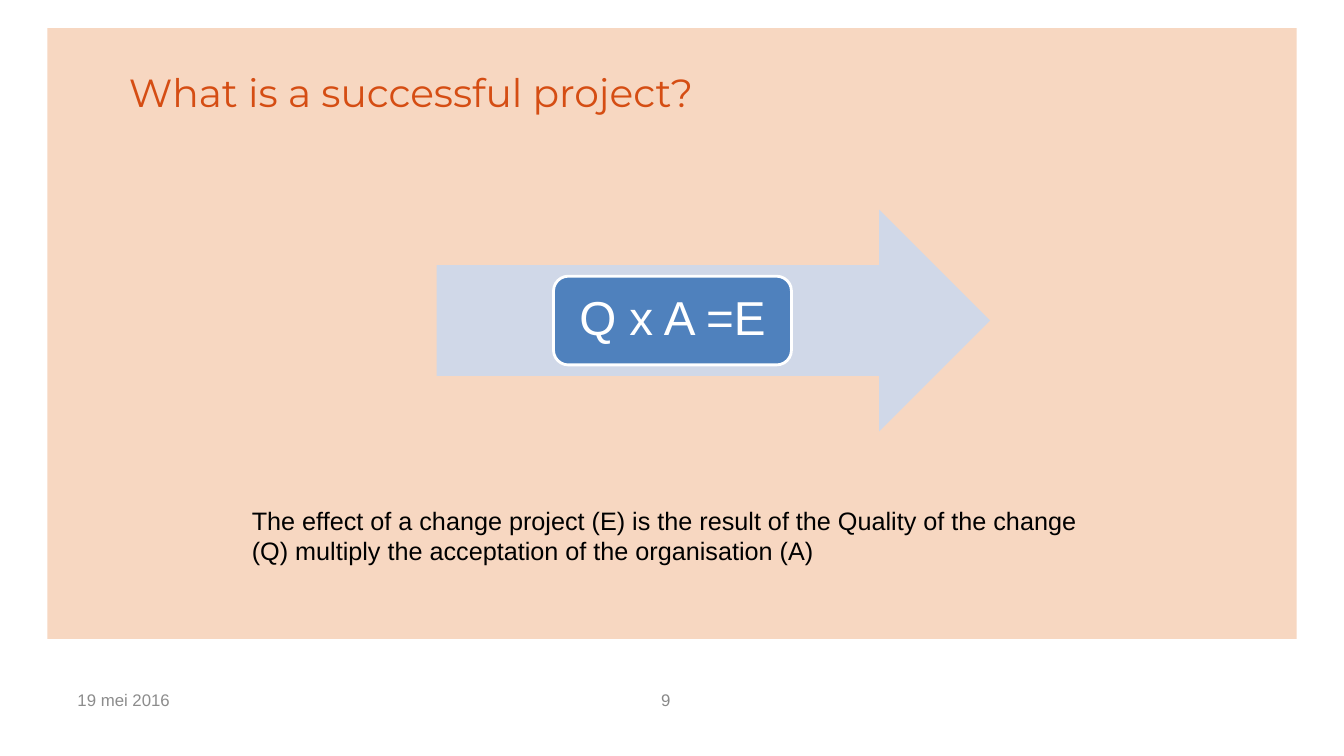
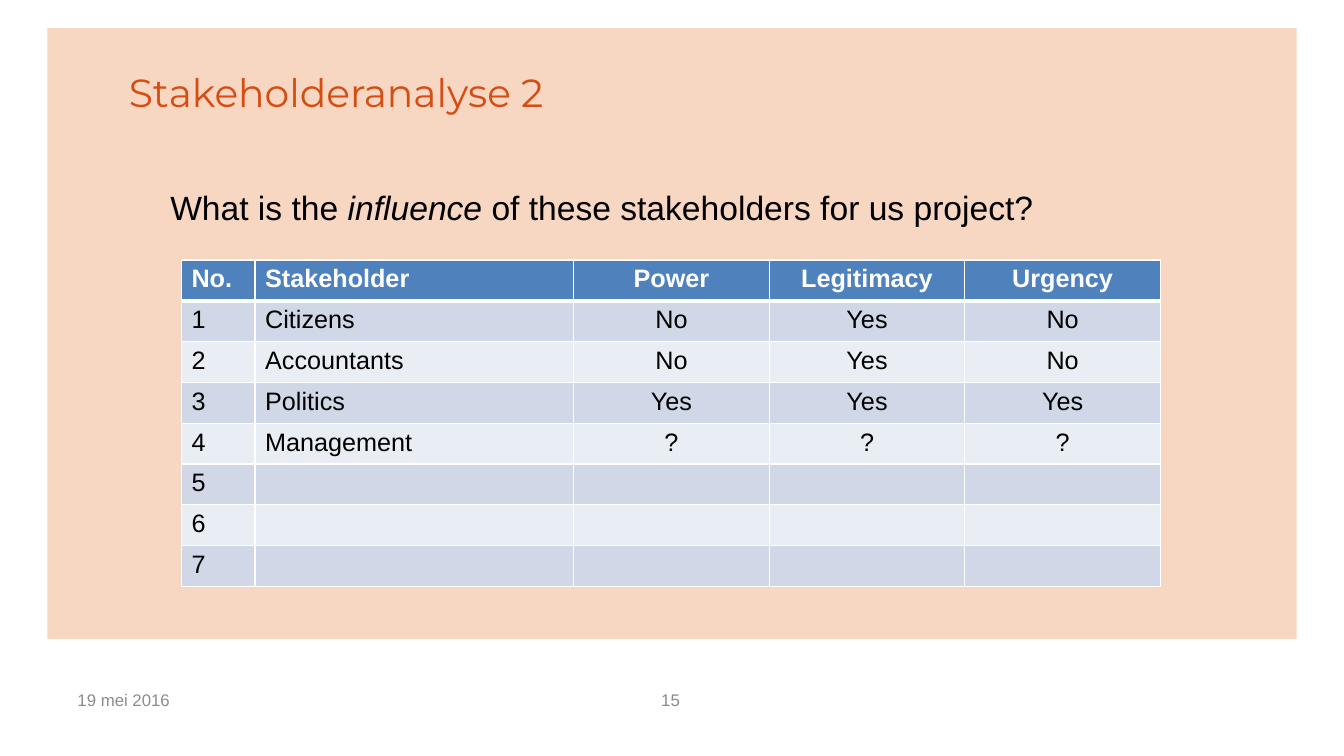
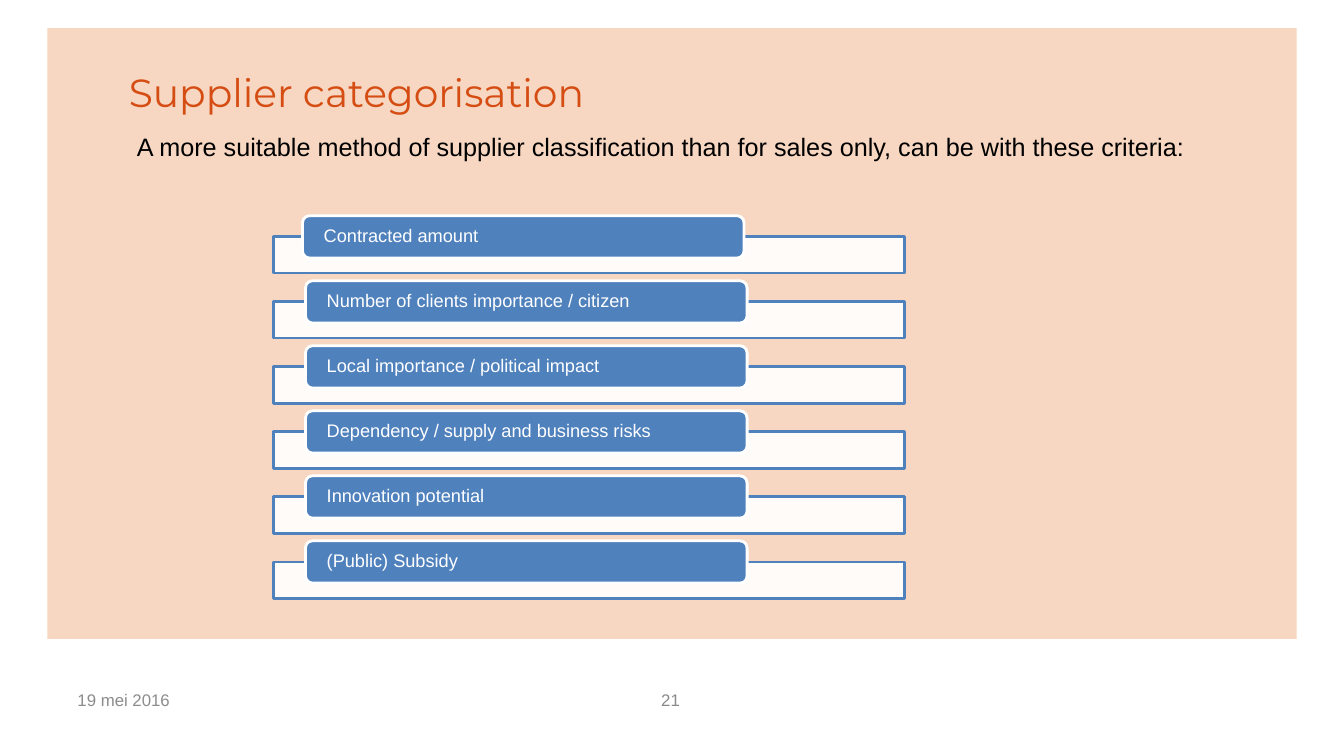
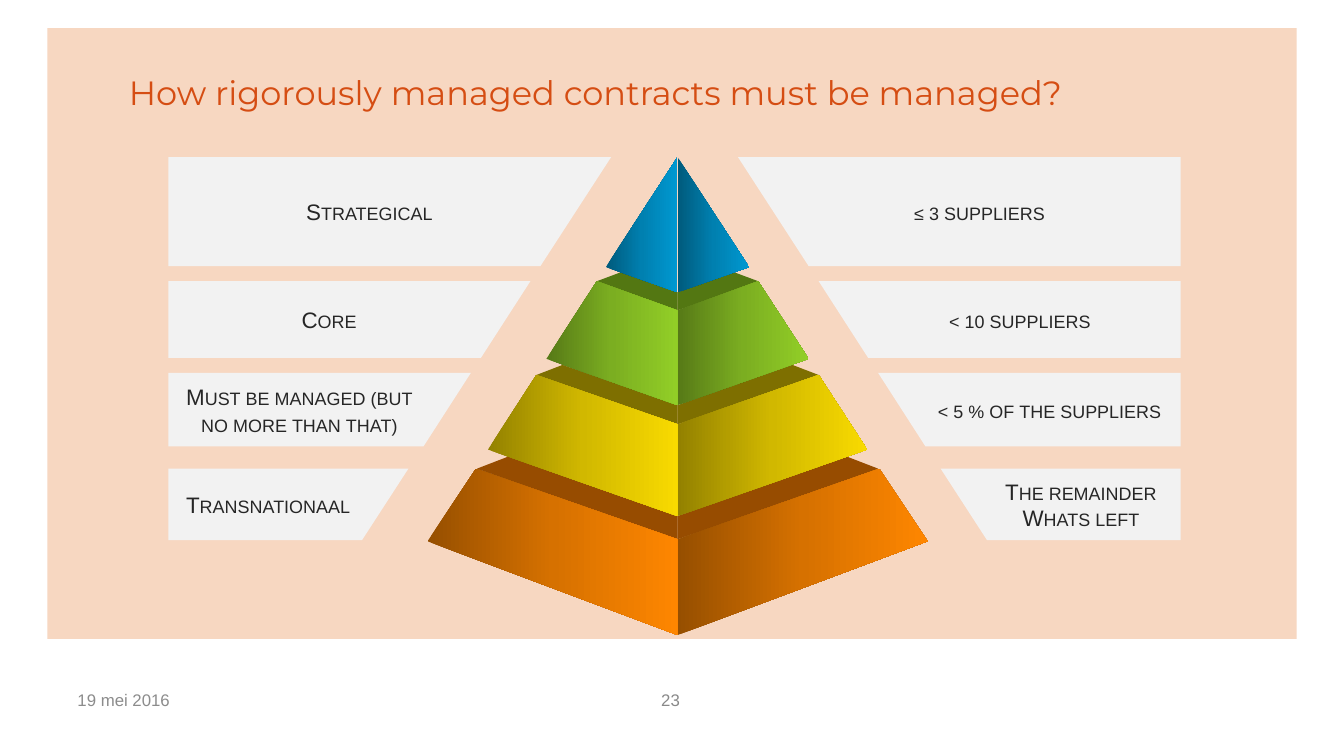
from dataclasses import dataclass

from lxml import etree
from pptx import Presentation
from pptx.dml.color import RGBColor
from pptx.enum import shapes, text
from pptx.oxml import ns
from pptx.util import Inches, Pt


@dataclass(frozen=True)
class Theme:
    band: str = "F7D7C1"
    title: str = "D54D13"
    date: str = "8C8C8C"
    page: str = "898989"
    ink: str = "000000"
    soft: str = "262626"
    white: str = "FFFFFF"
    blue: str = "4F81BD"
    pale: str = "D0D8E8"
    light: str = "E9EDF4"
    panel: str = "F2F2F2"
    body: str = "Arial"
    head: str = "Montserrat"
    huge: int = 34
    large: int = 28
    lead: int = 24
    base: int = 18
    label: int = 16
    item: int = 13
    small: int = 12


T = Theme()
LEFT, MID, RIGHT = text.PP_ALIGN.LEFT, text.PP_ALIGN.CENTER, text.PP_ALIGN.RIGHT
SHAPE = shapes.MSO_SHAPE
DATE = "19 mei 2016"

EFFECT = {
    "page": 9,
    "title": "What is a successful project?",
    "sum": "Q x A =E",
    "note": "The effect of a change project (E) is the result of the Quality of the change "
            "(Q) multiply the acceptation of the organisation (A)",
}
STAKES = {
    "page": 15,
    "title": "Stakeholderanalyse 2",
    "lead": "What is the *influence* of these stakeholders for us project?",
    "widths": [0.73, 3.16, 1.94, 1.94, 1.94],
    "rows": [
        ("No.", "Stakeholder", "Power", "Legitimacy", "Urgency"),
        ("1", "Citizens", "No", "Yes", "No"),
        ("2", "Accountants", "No", "Yes", "No"),
        ("3", "Politics", "Yes", "Yes", "Yes"),
        ("4", "Management", "?", "?", "?"),
        ("5", "", "", "", ""),
        ("6", "", "", "", ""),
        ("7", "", "", "", ""),
    ],
}
SUPPLY = {
    "page": 21,
    "title": "Supplier categorisation",
    "lead": "A more suitable method of supplier classification than for sales only, "
            "can be with these criteria:",
    "items": [
        "Contracted amount",
        "Number of clients importance / citizen",
        "Local importance / political impact",
        "Dependency / supply and business risks",
        "Innovation potential",
        "(Public) Subsidy",
    ],
}
RIGOUR = {
    "page": 23,
    "title": "How rigorously managed contracts must be managed?",
    "panels": [
        (1.56, 1.08, 4.39, 0.70, ["Strategical"], ["≤ 3 suppliers"]),
        (2.79, 0.76, 3.59, 0.49, ["Core"], ["< 10 suppliers"]),
        (3.70, 0.73, 3.00, 0.47, ["Must be managed (but no more than that)"],
         ["< 5 % of the suppliers"]),
        (4.65, 0.71, 2.38, 0.46, ["Transnationaal"], ["The remainder", "Whats left"]),
    ],
    "lids": [
        ("537712", [(0, 2.90), (0, 3.08), (0.80, 2.79), (0.56, 2.70)]),
        ("7E6F00", [(0, 4.02), (0, 4.21), (1.40, 3.72), (1.14, 3.62)]),
        ("974C00", [(0, 5.12), (0, 5.35), (1.99, 4.65), (1.68, 4.53)]),
    ],
    "faces": [
        (("964F00", "D67100", "FE8600"), [(0, 5.35), (0, 6.30), (2.48, 5.37), (2.00, 4.65)]),
        (("938100", "D1B800", "F8DA00"), [(0, 4.21), (0, 5.12), (1.88, 4.46), (1.40, 3.72)]),
        (("577A17", "7BAE21", "92CE27"), [(0, 3.08), (0, 4.02), (1.30, 3.56), (0.80, 2.79)]),
        (("005A7C", "0080B0", "0098D1"), [(0, 1.56), (0, 2.90), (0.71, 2.65)]),
    ],
}


def rgb(code):
    return RGBColor.from_string(code)


def node(parent, tag, **attrs):
    return etree.SubElement(parent, ns.qn(tag), **attrs)


def write(frame, lines, size=T.base, color=T.ink, font=T.body, align=LEFT, bold=False,
          caps=False, mid=False, inset=(0.1, 0.05, 0.1, 0.05), lead=None):
    frame.word_wrap = True
    frame.vertical_anchor = text.MSO_ANCHOR.MIDDLE if mid else text.MSO_ANCHOR.TOP
    for side, gap in zip(("left", "top", "right", "bottom"), inset):
        setattr(frame, "margin_" + side, Inches(gap))
    for n, line in enumerate([lines] if isinstance(lines, str) else lines):
        para = frame.add_paragraph() if n else frame.paragraphs[0]
        para.alignment = align
        if lead:
            para.line_spacing = lead
        for k, part in enumerate(line.split("*")):
            run = para.add_run()
            run.text = part
            run.font.size, run.font.name = Pt(size), font
            run.font.bold, run.font.italic = bold, k % 2 == 1
            run.font.color.rgb = rgb(color)
            if caps:
                run.font._element.set("cap", "small")


def label(slide, box, lines, **form):
    write(slide.shapes.add_textbox(*map(Inches, box)).text_frame, lines, **form)


def paint(shape, fill, line=None, alpha=None):
    shape.shadow.inherit = False
    if isinstance(fill, tuple):
        shape.fill.gradient()
        shape.fill.gradient_angle = 0
        stops = shape._element.spPr.find(".//" + ns.qn("a:gsLst"))
        for stop in list(stops):
            stops.remove(stop)
        for n, code in enumerate(fill):
            node(node(stops, "a:gs", pos=str(n * 50000)), "a:srgbClr", val=code)
    else:
        shape.fill.solid()
        shape.fill.fore_color.rgb = rgb(fill)
    if alpha:
        tint = shape._element.spPr.find(ns.qn("a:solidFill"))[0]
        node(tint, "a:alpha", val=str(alpha * 1000))
    if line:
        shape.line.color.rgb = rgb(line)
        shape.line.width = Pt(2)
    else:
        shape.line.fill.background()
    return shape


def block(slide, kind, box, fill, line=None, alpha=None):
    return paint(slide.shapes.add_shape(kind, *map(Inches, box)), fill, line, alpha)


def outline(slide, dots, fill):
    first, *rest = [(Inches(x), Inches(y)) for x, y in dots]
    pen = slide.shapes.build_freeform(*first)
    pen.add_line_segments(rest, close=True)
    return paint(pen.convert_to_shape(), fill)


def start(deck, data, size=T.large):
    slide = deck.slides.add_slide(deck.slide_layouts[6])
    block(slide, SHAPE.RECTANGLE, (0.47, 0.28, 12.39, 6.06), T.band)
    label(slide, (6.46, 6.74, 1.16, 0.4), str(data["page"]), size=T.small, color=T.page, mid=True)
    label(slide, (0.67, 6.74, 3.11, 0.4), DATE, size=T.small, color=T.date, mid=True)
    label(slide, (1.18, 0.44, 11.16, 0.95), data["title"], size=size, color=T.title,
          font=T.head, mid=True)
    return slide


def effect(deck):
    slide = start(deck, EFFECT)
    block(slide, SHAPE.RIGHT_ARROW, (4.33, 2.08, 5.49, 2.2), T.pale)
    card = block(slide, SHAPE.ROUNDED_RECTANGLE, (5.49, 2.74, 2.36, 0.88), T.blue, T.white)
    write(card.text_frame, EFFECT["sum"], size=T.huge, color=T.white, align=MID, mid=True,
          inset=(0.14,) * 4, lead=0.9)
    label(slide, (2.4, 4.96, 8.53, 0.71), EFFECT["note"])


def edge(cell, head):
    props = cell._tc.get_or_add_tcPr()
    for side in "LRTB":
        wide = 3 if head and side == "B" else 1
        line = node(props, "a:ln" + side, w=str(Pt(wide)))
        node(node(line, "a:solidFill"), "a:srgbClr", val=T.white)


def stakes(deck):
    slide = start(deck, STAKES)
    rows, widths = STAKES["rows"], STAKES["widths"]
    box = (1.8, 2.58, sum(widths), 3.24)
    grid = slide.shapes.add_table(len(rows), len(widths), *map(Inches, box)).table
    for col, width in zip(grid.columns, widths):
        col.width = Inches(width)
    for r, row in enumerate(rows):
        head = r == 0
        for c, word in enumerate(row):
            cell = grid.cell(r, c)
            edge(cell, head)
            cell.fill.solid()
            cell.fill.fore_color.rgb = rgb(T.blue if head else T.pale if r % 2 else T.light)
            if word:
                write(cell.text_frame, word, color=T.white if head else T.ink, bold=head,
                      align=MID if c > 1 else LEFT)
    label(slide, (1.59, 1.81, 9.39, 0.5), STAKES["lead"], size=T.lead)


def supply(deck):
    slide = start(deck, SUPPLY)
    for n, item in enumerate(SUPPLY["items"]):
        top = 2.14 + n * 0.645
        block(slide, SHAPE.RECTANGLE, (2.71, top + 0.21, 6.26, 0.36), T.white, T.blue, 90)
        tab = block(slide, SHAPE.ROUNDED_RECTANGLE, (3.03 if n else 3, top, 4.38, 0.42),
                    T.blue, T.white)
        write(tab.text_frame, item, size=T.item, color=T.white, mid=True,
              inset=(0.19, 0, 0.19, 0), lead=0.9)
    label(slide, (1.26, 1.25, 11.13, 0.4), SUPPLY["lead"])


def rigour(deck):
    slide = start(deck, RIGOUR, size=T.lead)
    for fill, dots in RIGOUR["lids"] + RIGOUR["faces"]:
        for sign in (-1, 1):
            outline(slide, [(6.72 + sign * x, y) for x, y in dots], fill)
    for top, high, wide, slant, *sides in RIGOUR["panels"]:
        low = top + high
        for edge_x, sign, lines in zip((1.67, 11.71), (1, -1), sides):
            dots = [(0, top), (wide, top), (wide - slant, low), (0, low)]
            panel = outline(slide, [(edge_x + sign * x, y) for x, y in dots], T.panel)
            inset = (0.1, 0.05, 0.5, 0.05) if sign > 0 else (0.5, 0.05, 0.1, 0.05)
            write(panel.text_frame, lines, size=T.label, color=T.soft, align=MID, caps=True,
                  mid=True, inset=inset)


def main():
    deck = Presentation()
    deck.slide_width, deck.slide_height = Inches(13.33), Inches(7.5)
    for build in (effect, stakes, supply, rigour):
        build(deck)
    deck.save("out.pptx")


if __name__ == "__main__":
    main()
